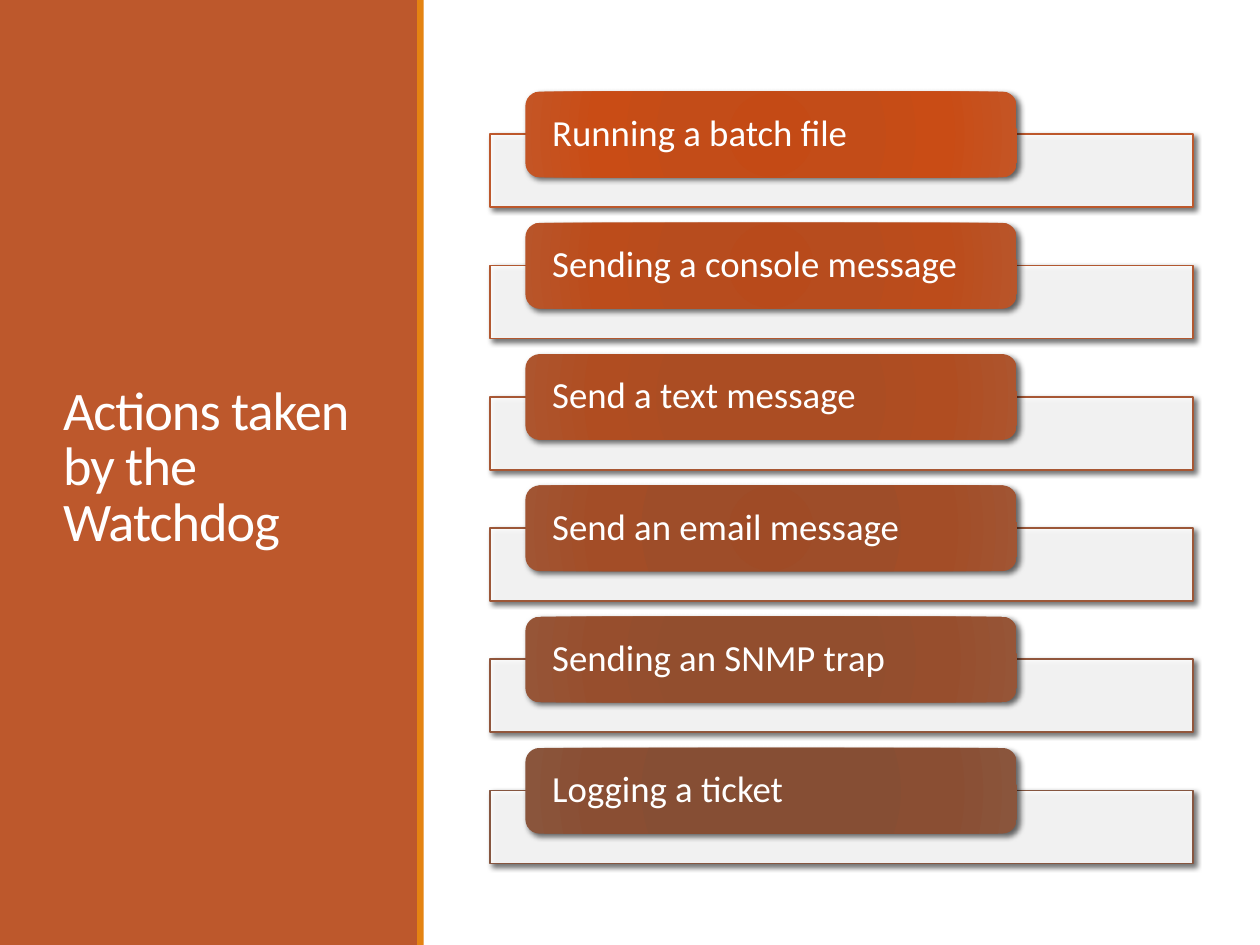
from dataclasses import dataclass

from lxml import etree
from pptx import Presentation
from pptx.dml.color import RGBColor
from pptx.enum.shapes import MSO_SHAPE
from pptx.enum.text import MSO_ANCHOR, MSO_AUTO_SIZE, PP_ALIGN
from pptx.oxml import parse_xml
from pptx.oxml.ns import nsdecls, qn
from pptx.shapes.autoshape import Shape
from pptx.util import Inches, Pt

RECT = MSO_SHAPE.RECTANGLE
ROUND = MSO_SHAPE.ROUNDED_RECTANGLE
MIDDLE = MSO_ANCHOR.MIDDLE
LEFT = PP_ALIGN.LEFT
NO_FIT = MSO_AUTO_SIZE.NONE

WHITE = RGBColor(0xFF, 0xFF, 0xFF)
BLACK = RGBColor(0x00, 0x00, 0x00)
RUST = RGBColor(0xBD, 0x58, 0x2C)
AMBER = RGBColor(0xE4, 0x83, 0x12)
BROWN = RGBColor(0x86, 0x56, 0x40)

# Gradient stops: percent, colour in the first row, colour in the last row
STOPS = (
    (0, RGBColor(0xC4, 0x4A, 0x15), RGBColor(0x87, 0x4C, 0x32)),
    (34, RGBColor(0xC3, 0x4C, 0x18), RGBColor(0x86, 0x4E, 0x34)),
    (70, RGBColor(0xC9, 0x4C, 0x15), RGBColor(0x8A, 0x4E, 0x33)),
    (100, RGBColor(0xC4, 0x55, 0x25), RGBColor(0x8A, 0x55, 0x3C)),
)

FONT = "Calibri"
WIDTH, HEIGHT = Inches(10), Inches(7.5)
PITCH = 13.89  # distance between rows, percent of the slide's height

ACTIONS = (
    "Running a batch file",
    "Sending a console message",
    "Send a text message",
    "Send an email message",
    "Sending an SNMP trap",
    "Logging a ticket",
)


@dataclass(frozen=True)
class Box:
    """A place on the slide, in percent of its width and height."""
    left: float
    top: float
    width: float
    height: float

    def down(self, rows: int) -> "Box":
        return Box(self.left, self.top + rows * PITCH, self.width, self.height)

    def emu(self) -> tuple[int, int, int, int]:
        return (int(WIDTH * self.left / 100), int(HEIGHT * self.top / 100),
                int(WIDTH * self.width / 100), int(HEIGHT * self.height / 100))


PANEL = Box(0, 0, 33.2, 100)
STRIPE = Box(33.1, 0, 0.53, 100)
TITLE = Box(4, 7.6, 25.3, 84.13)
BAR = Box(38.9, 14.2, 55.8, 7.73)
LABEL = Box(41.7, 9.7, 39, 9.07)


def blend(start: RGBColor, end: RGBColor, share: float) -> RGBColor:
    return RGBColor(*(round(a + (b - a) * share) for a, b in zip(start, end)))


def add_box(slide, kind: int, box: Box) -> Shape:
    shape = slide.shapes.add_shape(kind, *box.emu())
    shape.shadow.inherit = False
    shape.line.fill.background()
    return shape


def add_fill(slide, box: Box, color: RGBColor) -> Shape:
    shape = add_box(slide, RECT, box)
    shape.fill.solid()
    shape.fill.fore_color.rgb = color
    return shape


def cast_shadow(shape: Shape, blur: float) -> None:
    effects = shape._element.spPr.find(qn("a:effectLst"))
    effects.append(parse_xml(
        f'<a:outerShdw {nsdecls("a")} blurRad="{Pt(blur)}" dist="{Pt(2)}" '
        f'dir="2700000" algn="br" rotWithShape="0"><a:srgbClr val="{BLACK}">'
        '<a:alpha val="60000"/></a:srgbClr></a:outerShdw>'))


def set_gradient(shape: Shape, share: float) -> None:
    stops = "".join(
        f'<a:gs pos="{at * 1000}"><a:srgbClr val="{blend(start, end, share)}"/></a:gs>'
        for at, start, end in STOPS)
    shape._element.spPr.find(qn("a:prstGeom")).addnext(parse_xml(
        f'<a:gradFill {nsdecls("a")} rotWithShape="1"><a:gsLst>{stops}</a:gsLst>'
        '<a:path path="circle"><a:fillToRect l="100000" t="100000" '
        'r="100000" b="100000"/></a:path></a:gradFill>'))


def set_text(shape: Shape, text: str, size: float, spacing: float) -> None:
    frame = shape.text_frame
    frame.text = text
    frame.word_wrap = True
    frame.auto_size = NO_FIT
    frame.vertical_anchor = MIDDLE
    para = frame.paragraphs[0]
    para.alignment = LEFT
    para.line_spacing = spacing
    font = para.runs[0].font
    font.name, font.size = FONT, Pt(size)
    font.color.rgb = WHITE


def add_bar(slide, row: int, share: float) -> None:
    bar = add_fill(slide, BAR.down(row), WHITE)
    color = bar._element.spPr.find(qn("a:solidFill"))[0]
    etree.SubElement(color, qn("a:alpha")).set("val", "90000")
    bar.line.color.rgb = blend(RUST, BROWN, share)
    bar.line.width = Pt(1)
    cast_shadow(bar, 3)


def add_label(slide, row: int, share: float, text: str) -> None:
    label = add_box(slide, ROUND, LABEL.down(row))
    set_gradient(label, share)
    cast_shadow(label, 3.5)
    set_text(label, text, 21, 0.9)
    frame = label.text_frame
    frame.margin_left = frame.margin_right = Inches(0.18)
    frame.margin_top = frame.margin_bottom = 0


def main() -> None:
    deck = Presentation()
    deck.slide_width, deck.slide_height = WIDTH, HEIGHT
    slide = deck.slides.add_slide(deck.slide_layouts[5])

    # Side panel, with the title raised above it
    add_fill(slide, PANEL, RUST)
    title = slide.shapes.title
    title.left, title.top, title.width, title.height = TITLE.emu()
    set_text(title, "Actions taken by the Watchdog", 31, 0.85)
    title.text_frame.paragraphs[0].runs[0].font._element.set("spc", "-50")
    slide.shapes._spTree.append(title._element)
    add_fill(slide, STRIPE, AMBER)

    # List of actions
    for row, text in enumerate(ACTIONS):
        share = row / (len(ACTIONS) - 1)
        add_bar(slide, row, share)
        add_label(slide, row, share, text)

    deck.save("out.pptx")


if __name__ == "__main__":
    main()
